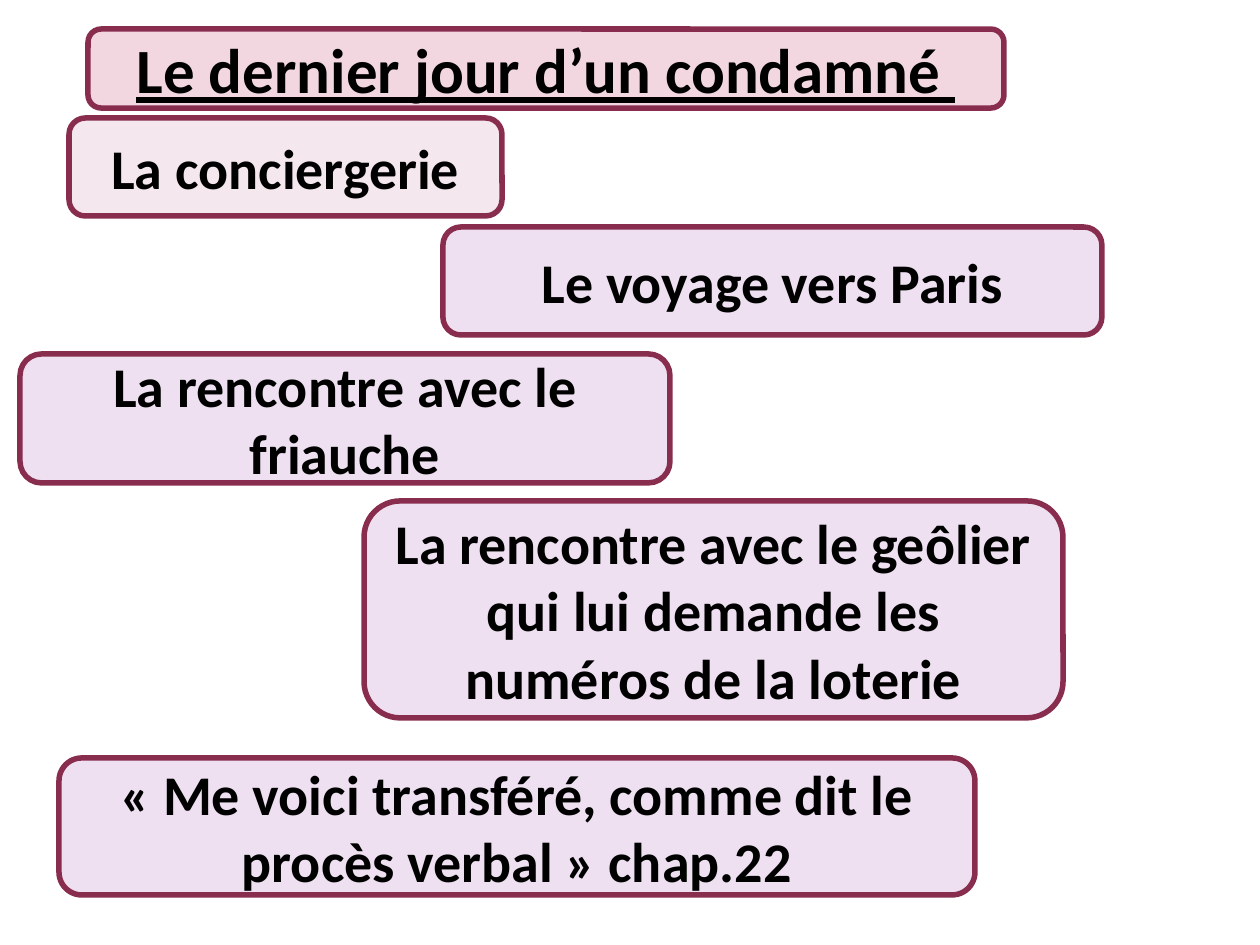
import pptx
import pptx.dml.color
import pptx.enum.shapes
import pptx.enum.text
import pptx.util

RGBColor = pptx.dml.color.RGBColor
PX = 914400 // 126  # EMU per px

ROSE = RGBColor(0xF2, 0xD7, 0xE0)
BLUSH = RGBColor(0xF4, 0xE7, 0xED)
LILAC = RGBColor(0xEE, 0xE0, 0xF1)
WINE = RGBColor(0x88, 0x2D, 0x4D)
BLACK = RGBColor(0, 0, 0)


class Deck:
    """Holds the style and the current slide."""

    font_name = "Calibri"
    line_width = pptx.util.Pt(3.15)

    def __init__(self, prs):
        self.slide = prs.slides.add_slide(prs.slide_layouts[6])

    def box(self, text, left, top, width, height, fill=LILAC, size=32, underline=False):
        s = self.slide.shapes.add_shape(
            pptx.enum.shapes.MSO_SHAPE.ROUNDED_RECTANGLE,
            left * PX, top * PX, width * PX, height * PX)
        s.shadow.inherit = False
        s.fill.solid()
        s.fill.fore_color.rgb = fill
        s.line.color.rgb = WINE
        s.line.width = self.line_width

        tf = s.text_frame
        tf.word_wrap = True
        tf.vertical_anchor = pptx.enum.text.MSO_ANCHOR.MIDDLE
        p = tf.paragraphs[0]
        p.text = text
        p.alignment = pptx.enum.text.PP_ALIGN.CENTER
        p.font.name = self.font_name
        p.font.size = pptx.util.Pt(size)
        p.font.bold = True
        p.font.underline = underline
        p.font.color.rgb = BLACK
        return s


def main():
    prs = pptx.Presentation()
    prs.slide_width = pptx.util.Inches(10)
    prs.slide_height = pptx.util.Inches(7.5)
    deck = Deck(prs)

    # Title
    deck.box("Le dernier jour d’un condamné ", 88, 29, 916, 79,
             fill=ROSE, size=36, underline=True)

    # Place
    deck.box("La conciergerie", 69, 118, 433, 98, fill=BLUSH)

    # Events
    deck.box("Le voyage vers Paris", 443, 227, 659, 108)
    deck.box("La rencontre avec le friauche", 20, 354, 650, 129)
    deck.box("« Me voici transféré, comme dit le procès verbal » chap.22",
             59, 758, 916, 137)
    deck.box("La rencontre avec le geôlier qui lui demande les numéros de la loterie",
             364, 501, 699, 217)

    prs.save("out.pptx")


if __name__ == "__main__":
    main()
